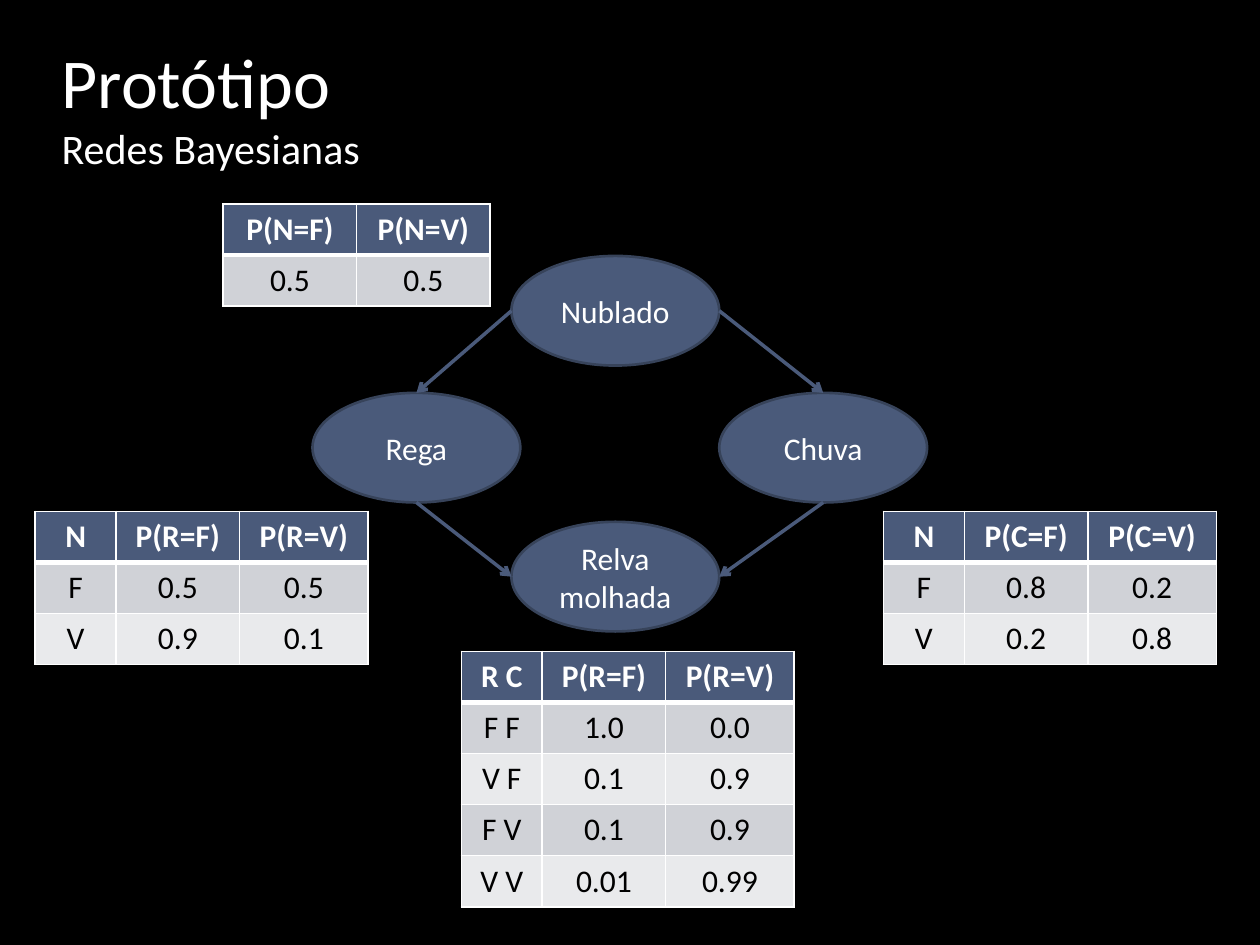
"""Build a slide showing a Bayesian network with its probability tables."""
from dataclasses import dataclass

from lxml.etree import SubElement
from pptx import Presentation
from pptx.dml.color import RGBColor
from pptx.enum.shapes import MSO_CONNECTOR, MSO_SHAPE
from pptx.enum.text import MSO_ANCHOR, PP_ALIGN
from pptx.oxml.ns import qn
from pptx.util import Cm, Pt


@dataclass(frozen=True)
class Theme:
    """Colours, font and type sizes of the slide."""

    font: str = "Calibri"
    background: str = "000000"
    light: str = "FFFFFF"
    dark: str = "000000"
    accent: str = "4A5A7A"
    outline: str = "37435A"
    bands: tuple = ("D0D2D7", "E9EAEC")
    title_size: int = 40
    subtitle_size: int = 24
    body_size: int = 18


THEME = Theme()
NODE_WIDTH, NODE_HEIGHT = 4.19, 2.21
ROW_HEIGHT = 1.03
PRIOR_COLUMNS = (2.69, 2.69)
CONDITIONAL_COLUMNS = (1.63, 2.49, 2.59)

NODES = {
    "Nublado": (10.31, 5.16),
    "Relva molhada": (10.31, 10.52),
    "Chuva": (14.5, 7.92),
    "Rega": (6.3, 7.92),
}
ARROWS = (
    ("Nublado", "left", "Rega", "top"),
    ("Nublado", "right", "Chuva", "top"),
    ("Rega", "bottom", "Relva molhada", "left"),
    ("Chuva", "bottom", "Relva molhada", "right"),
)
SIDES = {"left": (0, 0.5), "right": (1, 0.5), "top": (0.5, 0), "bottom": (0.5, 1)}
TABLES = (
    (4.5, 4.11, PRIOR_COLUMNS, (("P(N=F)", "P(N=V)"), ("0.5", "0.5"))),
    (0.71, 10.31, CONDITIONAL_COLUMNS, (
        ("N", "P(R=F)", "P(R=V)"),
        ("F", "0.5", "0.5"),
        ("V", "0.9", "0.1"),
    )),
    (17.81, 10.31, CONDITIONAL_COLUMNS, (
        ("N", "P(C=F)", "P(C=V)"),
        ("F", "0.8", "0.2"),
        ("V", "0.2", "0.8"),
    )),
    (9.3, 13.13, CONDITIONAL_COLUMNS, (
        ("R C", "P(R=F)", "P(R=V)"),
        ("F F", "1.0", "0.0"),
        ("V F", "0.1", "0.9"),
        ("F V", "0.1", "0.9"),
        ("V V", "0.01", "0.99"),
    )),
)


def paint(fill, colour):
    """Give a fill one solid colour."""
    fill.solid()
    fill.fore_color.rgb = RGBColor.from_string(colour)


def format_run(run, size, colour, bold=False):
    """Set the font of a run."""
    run.font.name = THEME.font
    run.font.size = Pt(size)
    run.font.bold = bold
    run.font.color.rgb = RGBColor.from_string(colour)


def write_centred(text_frame, text, colour, bold=False):
    """Write one centred paragraph of body text."""
    text_frame.text = text
    paragraph = text_frame.paragraphs[0]
    paragraph.alignment = PP_ALIGN.CENTER
    format_run(paragraph.runs[0], THEME.body_size, colour, bold)


def set_title(slide, title, subtitle):
    """Place the title with its smaller second line."""
    shape = slide.shapes.title
    shape.left, shape.top = Cm(0.99), Cm(0.64)
    shape.width, shape.height = Cm(21.34), Cm(2.97)
    text_frame = shape.text_frame
    text_frame.vertical_anchor = MSO_ANCHOR.BOTTOM
    text_frame.text = f"{title}\v{subtitle}"
    paragraph = text_frame.paragraphs[0]
    paragraph.alignment = PP_ALIGN.LEFT
    paragraph.space_before = Pt(4)
    for run, size in zip(paragraph.runs, (THEME.title_size, THEME.subtitle_size)):
        format_run(run, size, THEME.light)


def add_node(slide, name, left, top):
    """Add an ellipse for one variable of the network."""
    shape = slide.shapes.add_shape(
        MSO_SHAPE.OVAL, Cm(left), Cm(top), Cm(NODE_WIDTH), Cm(NODE_HEIGHT))
    shape.shadow.inherit = False
    paint(shape.fill, THEME.accent)
    paint(shape.line.fill, THEME.outline)
    shape.line.width = Pt(1.5)
    shape.text_frame.word_wrap = True
    shape.text_frame.vertical_anchor = MSO_ANCHOR.MIDDLE
    write_centred(shape.text_frame, name, THEME.light)


def side_point(name, side):
    """Return the middle of one side of a node."""
    left, top = NODES[name]
    across, down = SIDES[side]
    return Cm(left + across * NODE_WIDTH), Cm(top + down * NODE_HEIGHT)


def add_arrow(slide, start, end):
    """Add a straight arrow between two points."""
    connector = slide.shapes.add_connector(MSO_CONNECTOR.STRAIGHT, *start, *end)
    paint(connector.line.fill, THEME.accent)
    connector.line.width = Pt(2)
    properties = connector.element.spPr
    SubElement(properties.find(qn("a:ln")), qn("a:tailEnd"), type="arrow")
    SubElement(properties, qn("a:effectLst"))


def set_borders(cell, row):
    """Draw cell borders, with a thick rule beneath the header row."""
    properties = cell._tc.get_or_add_tcPr()
    top, bottom = (3 if row == 1 else 1), (3 if row == 0 else 1)
    for tag, width in (("lnL", 1), ("lnR", 1), ("lnT", top), ("lnB", bottom)):
        line = SubElement(properties, qn(f"a:{tag}"), w=str(Pt(width)))
        SubElement(SubElement(line, qn("a:solidFill")), qn("a:srgbClr"), val=THEME.light)


def add_probability_table(slide, left, top, widths, rows):
    """Add a table with a header row and banded values."""
    table = slide.shapes.add_table(
        len(rows), len(widths), Cm(left), Cm(top),
        Cm(sum(widths)), Cm(ROW_HEIGHT * len(rows))).table
    for column, width in zip(table.columns, widths):
        column.width = Cm(width)
    for row, values in enumerate(rows):
        header = row == 0
        for column, value in enumerate(values):
            cell = table.cell(row, column)
            set_borders(cell, row)
            paint(cell.fill, THEME.accent if header else THEME.bands[(row - 1) % 2])
            write_centred(
                cell.text_frame, value, THEME.light if header else THEME.dark, header)


def main():
    """Build and save the presentation."""
    presentation = Presentation()
    presentation.slide_width, presentation.slide_height = Cm(25.4), Cm(19.05)
    slide = presentation.slides.add_slide(presentation.slide_layouts[5])
    paint(slide.background.fill, THEME.background)
    set_title(slide, "Protótipo", "Redes Bayesianas")
    for name, position in NODES.items():
        add_node(slide, name, *position)
    for source, source_side, target, target_side in ARROWS:
        add_arrow(slide, side_point(source, source_side), side_point(target, target_side))
    for table in TABLES:
        add_probability_table(slide, *table)
    presentation.save("out.pptx")


if __name__ == "__main__":
    main()
